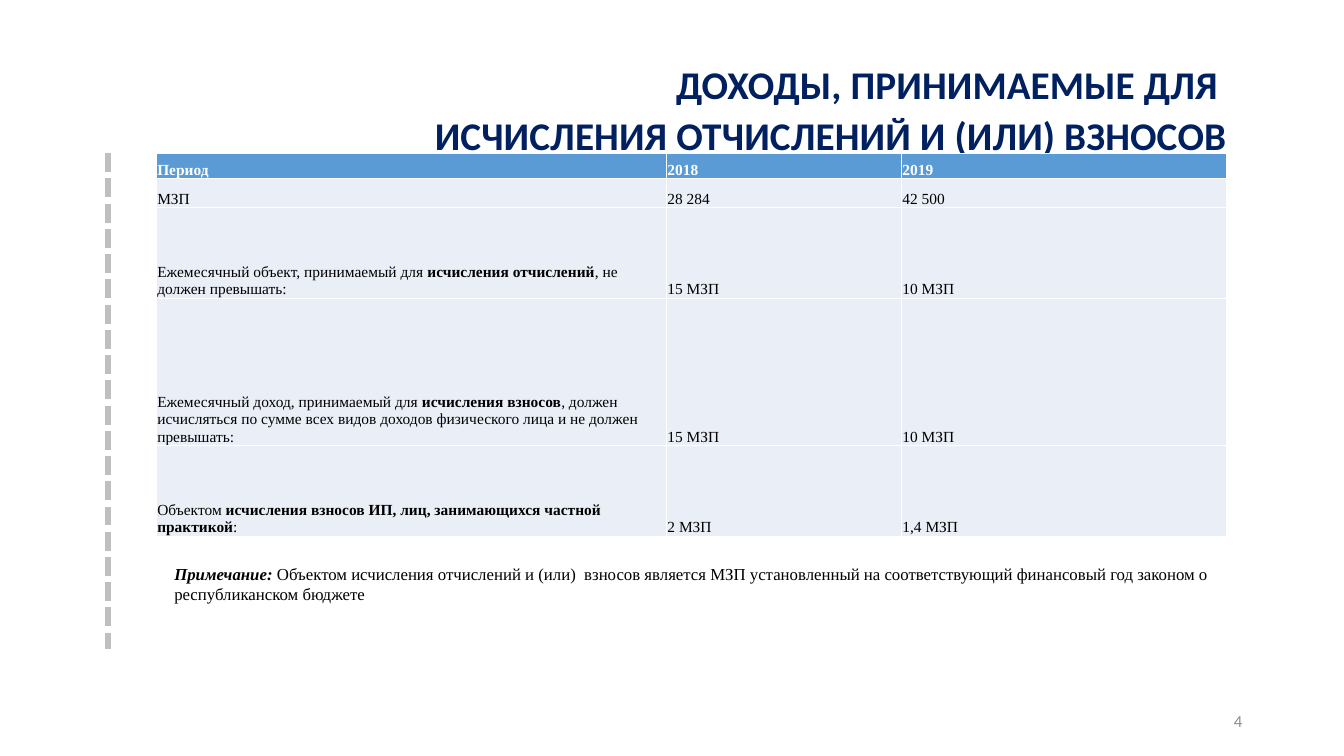
from lxml.etree import SubElement
from pptx import Presentation
from pptx.dml.color import RGBColor
from pptx.enum.dml import MSO_LINE
from pptx.enum.shapes import MSO_CONNECTOR
from pptx.enum.text import MSO_ANCHOR, PP_ALIGN
from pptx.oxml.ns import qn
from pptx.util import Inches, Pt

SERIF = "Times New Roman"
COLUMNS = [5.06, 2.33, 3.23]
ROWS = [0.25, 0.29, 0.9, 1.46, 0.9]
# Each cell is a list of (text, bold) runs
INCOME = [
    [[("Период", True)], [("2018", True)], [("2019", True)]],
    [[("МЗП", False)], [("28 284", False)], [("42 500", False)]],
    [[("Ежемесячный объект, принимаемый для ", False),
      ("исчисления отчислений", True),
      (", не должен превышать:", False)],
     [("15 МЗП", False)], [("10 МЗП", False)]],
    [[("Ежемесячный доход, принимаемый для ", False),
      ("исчисления взносов", True),
      (", должен исчисляться по сумме всех видов доходов физического лица "
       "и не должен превышать:", False)],
     [("15 МЗП", False)], [("10 МЗП", False)]],
    [[("Объектом ", False),
      ("исчисления взносов ИП, лиц, занимающихся частной практикой", True),
      (":", False)],
     [("2 МЗП", False)], [("1,4 МЗП", False)]],
]


def rgb(color):
    return RGBColor.from_string(color)


def add_run(p, text, size, font, color, bold=False, italic=False):
    r = p.add_run()
    r.text = text
    r.font.size = Pt(size)
    r.font.name = font
    r.font.color.rgb = rgb(color)
    r.font.bold = bold
    r.font.italic = italic
    return r


def add_text_box(s, x, y, w, h, anchor=MSO_ANCHOR.TOP):
    tf = s.shapes.add_textbox(Inches(x), Inches(y), Inches(w), Inches(h)).text_frame
    tf.word_wrap = True
    tf.vertical_anchor = anchor
    return tf


def add_title(s, x, y, w, h):
    tf = add_text_box(s, x, y, w, h)
    lines = ["ДОХОДЫ, ПРИНИМАЕМЫЕ ДЛЯ ", "ИСЧИСЛЕНИЯ ОТЧИСЛЕНИЙ И (ИЛИ) ВЗНОСОВ"]
    for i, line in enumerate(lines):
        p = tf.add_paragraph() if i else tf.paragraphs[0]
        p.alignment = PP_ALIGN.RIGHT
        p.line_spacing = 1.07
        r = add_run(p, line, 28, "Calibri", "002060", bold=True)
        r.font._element.set("spc", "10")


def add_side_line(s, x, y, h):
    line = s.shapes.add_connector(MSO_CONNECTOR.STRAIGHT, Inches(x), Inches(y),
                                  Inches(x), Inches(y + h))
    line.line.color.rgb = rgb("BFBFBF")
    line.line.width = Pt(4.5)
    line.line.dash_style = MSO_LINE.SQUARE_DOT
    SubElement(line._element.spPr, qn("a:effectLst"))


def set_borders(cell, color, width):
    tcPr = cell._tc.get_or_add_tcPr()
    for i, side in enumerate(["a:lnL", "a:lnR", "a:lnT", "a:lnB"]):
        ln = tcPr.makeelement(qn(side), {"w": str(Pt(width))})
        fill = SubElement(ln, qn("a:solidFill"))
        SubElement(fill, qn("a:srgbClr"), val=color)
        tcPr.insert(i, ln)  # borders come before the cell fill


def add_income_table(s, x, y):
    table = s.shapes.add_table(len(ROWS), len(COLUMNS), Inches(x), Inches(y),
                               Inches(sum(COLUMNS)), Inches(sum(ROWS))).table
    for column, width in zip(table.columns, COLUMNS):
        column.width = Inches(width)
    for i, (height, contents) in enumerate(zip(ROWS, INCOME)):
        table.rows[i].height = Inches(height)
        for j, runs in enumerate(contents):
            cell = table.cell(i, j)
            cell.fill.solid()
            cell.fill.fore_color.rgb = rgb("EAEFF7" if i else "5B9BD5")
            set_borders(cell, "FFFFFF", 1)
            cell.margin_left = cell.margin_right = cell.margin_top = Inches(0.01)
            cell.margin_bottom = 0
            cell.vertical_anchor = MSO_ANCHOR.BOTTOM
            for text, bold in runs:
                add_run(cell.text_frame.paragraphs[0], text, 11, SERIF,
                        "000000" if i else "FFFFFF", bold)


def add_note(s, x, y, w, h):
    p = add_text_box(s, x, y, w, h).paragraphs[0]
    add_run(p, "Примечание: ", 12, SERIF, "000000", bold=True, italic=True)
    add_run(p, "Объектом исчисления отчислений и (или)  взносов является МЗП "
               "установленный на соответствующий финансовый год законом о "
               "республиканском бюджете", 12, SERIF, "000000")


def add_slide_number(s, x, y, w, h):
    p = add_text_box(s, x, y, w, h, MSO_ANCHOR.MIDDLE).paragraphs[0]
    p.alignment = PP_ALIGN.RIGHT
    add_run(p, "4", 12, "Calibri", "8C8C8C")


def main():
    prs = Presentation()
    prs.slide_width, prs.slide_height = Inches(13.33), Inches(7.5)
    s = prs.slides.add_slide(prs.slide_layouts[6])
    add_slide_number(s, 9.42, 6.95, 3, 0.4)
    add_title(s, 1.07, 0.52, 11.2, 1.11)
    add_side_line(s, 1.07, 1.52, 4.92)
    add_income_table(s, 1.55, 1.52)
    add_note(s, 1.63, 5.54, 10.78, 0.5)
    prs.save("out.pptx")


if __name__ == "__main__":
    main()
